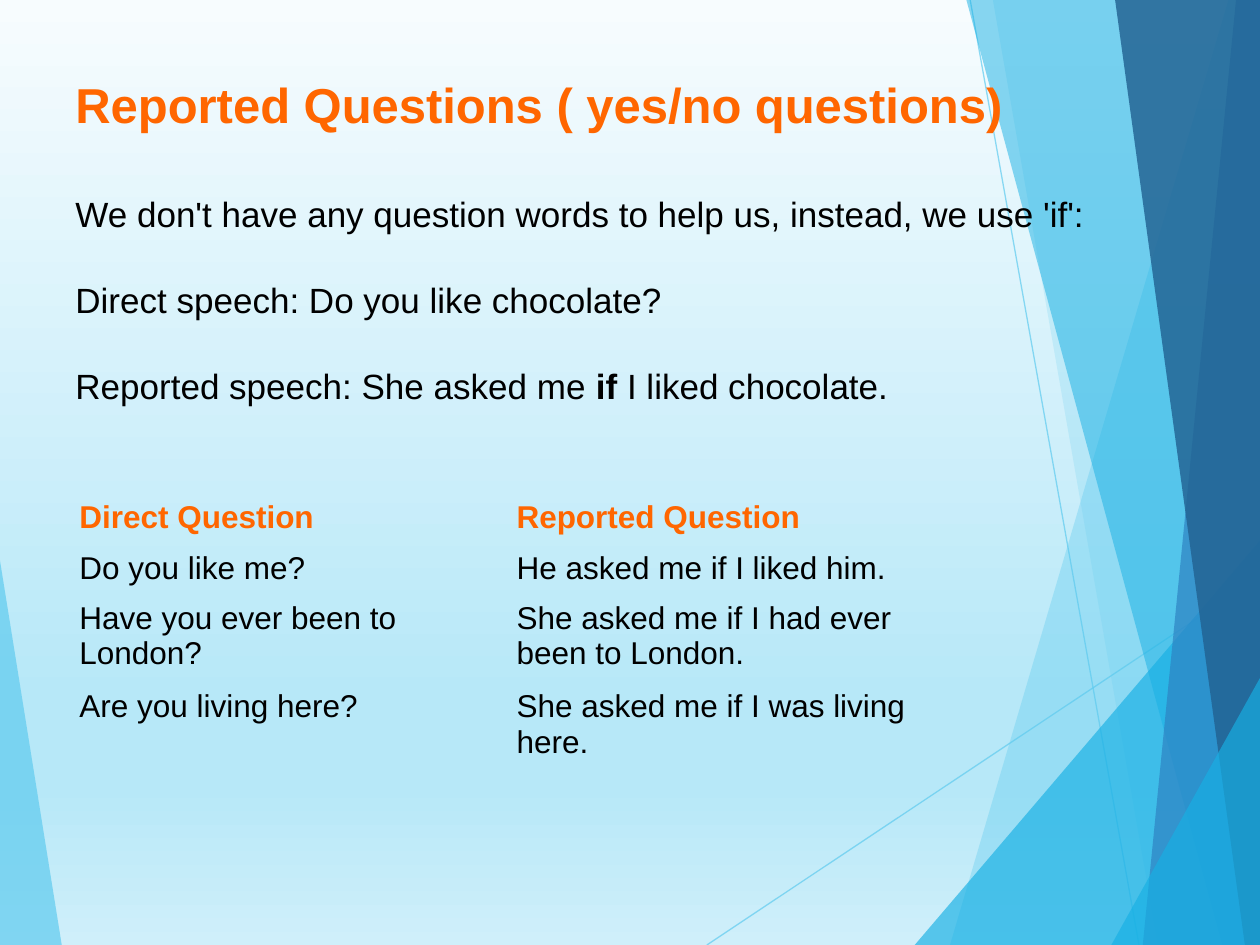
from typing import NamedTuple

from lxml.etree import SubElement
from pptx import Presentation
from pptx.dml.color import RGBColor
from pptx.enum.shapes import MSO_CONNECTOR as Conn
from pptx.enum.text import MSO_ANCHOR as Anchor
from pptx.oxml.ns import qn
from pptx.util import Emu, Pt

COLS, ROWS = 1000, 750  # the slide grid
UNIT = 9144  # one grid cell, a hundredth of an inch
FONT = "Arial"

SKY = RGBColor(0x5F, 0xCB, 0xEF)
CYAN = RGBColor(0x17, 0xB0, 0xE4)
BLUE = RGBColor(0x2E, 0x83, 0xC3)
NAVY = RGBColor(0x22, 0x62, 0x92)
ORANGE = RGBColor(0xFF, 0x66, 0x00)
BLACK = RGBColor(0x00, 0x00, 0x00)
BACKDROP = [
    (0, RGBColor(0xF7, 0xFC, 0xFE)),
    (74, RGBColor(0xB7, 0xE8, 0xF8)),
    (83, RGBColor(0xB7, 0xE8, 0xF8)),
    (100, RGBColor(0xCF, 0xEF, 0xFA)),
]
NO_STYLE = "{2D5ABB26-0587-4C30-8999-92F81FD0307C}"


class Facet(NamedTuple):
    points: list[tuple[int, int]]
    color: RGBColor
    opacity: int


class Ray(NamedTuple):
    start: tuple[int, int]
    end: tuple[int, int]


class Line(NamedTuple):
    runs: list[tuple[str, bool]]
    size: int
    color: RGBColor
    before: int


def right_facet(top: int, bottom: int, color: RGBColor, opacity: int) -> Facet:
    """Full-height facet between a slanted edge and the right side."""
    return Facet([(top, 0), (bottom, ROWS), (COLS, ROWS), (COLS, 0)], color, opacity)


def corner_facet(left: int, top: int) -> Facet:
    return Facet([(left, ROWS), (COLS, top), (COLS, ROWS)], CYAN, 66)


LEFT_FACET = Facet([(0, 445), (49, ROWS), (0, ROWS)], SKY, 70)
RAYS = [Ray((561, 750), (1001, 457)), Ray((770, 0), (904, 750))]
RIGHT_FACETS = [
    right_facet(975, 754, SKY, 36),
    right_facet(788, 919, SKY, 20),
    corner_facet(726, 429),
    right_facet(767, 970, CYAN, 50),
    right_facet(981, 907, BLUE, 70),
    right_facet(885, 988, NAVY, 82),
    corner_facet(882, 538),
]
LINES = [
    Line([("Reported Questions ( yes/no questions)", True)], 28, ORANGE, 0),
    Line([("We don't have any question words to help us, instead, we use\u00a0'if':", False)],
         20, BLACK, 34),
    Line([("Direct speech: Do you like chocolate?", False)], 20, BLACK, 25),
    Line([("Reported speech: She asked me ", False), ("if", True),
          (" I liked chocolate.", False)], 20, BLACK, 25),
]
QUESTIONS = [
    ("Direct Question", "Reported Question"),
    ("Do you like me?", "He asked me if I liked him."),
    ("Have you ever been to London?", "She asked me if I had ever been to London."),
    ("Are you living here?", "She asked me if I was living here."),
]
ROW_HEIGHTS = [40, 40, 70, 70]
COL_WIDTH = 347


def grid(*cells: int) -> list[Emu]:
    return [Emu(c * UNIT) for c in cells]


def set_opacity(element, percent: int) -> None:
    color = next(element.iter(qn("a:srgbClr")))
    SubElement(color, qn("a:alpha"), val=str(percent * 1000))


def paint_background(slide) -> None:
    fill = slide.background.fill
    fill.gradient()
    fill.gradient_angle = 270
    stops = next(slide.element.iter(qn("a:gsLst")))
    for stop in list(stops):
        stops.remove(stop)
    for pos, color in BACKDROP:
        stop = SubElement(stops, qn("a:gs"), pos=str(pos * 1000))
        SubElement(stop, qn("a:srgbClr"), val=str(color))


def draw_facet(slide, facet: Facet) -> None:
    builder = slide.shapes.build_freeform(*facet.points[0], scale=UNIT)
    builder.add_line_segments(facet.points[1:], close=True)
    sp = builder.convert_to_shape()
    sp.shadow.inherit = False
    sp.line.fill.background()
    sp.fill.solid()
    sp.fill.fore_color.rgb = facet.color
    set_opacity(sp.element, facet.opacity)


def draw_ray(slide, ray: Ray) -> None:
    line = slide.shapes.add_connector(Conn.STRAIGHT, *grid(*ray.start, *ray.end))
    line.line.width = Pt(0.75)
    line.line.color.rgb = SKY
    set_opacity(line.element, 70)
    SubElement(line.element.spPr, qn("a:effectLst"))


def set_font(p, size: int, color: RGBColor) -> None:
    p.font.name, p.font.size, p.font.color.rgb = FONT, Pt(size), color


def draw_text(slide) -> None:
    tf = slide.shapes.add_textbox(*grid(50, 50, 842, 481)).text_frame
    tf.word_wrap = True
    tf.margin_top = Emu(9 * UNIT)
    for i, line in enumerate(LINES):
        p = tf.add_paragraph() if i else tf.paragraphs[0]
        p.space_before = Pt(line.before)
        set_font(p, line.size, line.color)
        for text, bold in line.runs:
            r = p.add_run()
            r.text, r.font.bold = text, bold


def draw_table(slide) -> None:
    frame = slide.shapes.add_table(
        len(QUESTIONS), 2, *grid(58, 392, 2 * COL_WIDTH, sum(ROW_HEIGHTS)))
    table = frame.table
    next(frame.element.iter(qn("a:tableStyleId"))).text = NO_STYLE
    table.horz_banding = False
    for col in table.columns:
        col.width = Emu(COL_WIDTH * UNIT)
    for i, (row, height, texts) in enumerate(zip(table.rows, ROW_HEIGHTS, QUESTIONS)):
        row.height = Emu(height * UNIT)
        for cell, text in zip(row.cells, texts):
            cell.fill.background()
            cell.vertical_anchor = Anchor.TOP
            cell.margin_left = cell.margin_right = Emu(5 * UNIT)
            cell.margin_top = cell.margin_bottom = Emu(5 * UNIT)
            cell.text = text
            p = cell.text_frame.paragraphs[0]
            set_font(p, 18, BLACK if i else ORANGE)
            p.font.bold = i == 0


def main() -> None:
    prs = Presentation()
    prs.slide_width, prs.slide_height = grid(COLS, ROWS)
    slide = prs.slides.add_slide(prs.slide_layouts[6])
    paint_background(slide)
    draw_facet(slide, LEFT_FACET)
    for ray in RAYS:
        draw_ray(slide, ray)
    for facet in RIGHT_FACETS:
        draw_facet(slide, facet)
    draw_text(slide)
    draw_table(slide)
    prs.save("out.pptx")


if __name__ == "__main__":
    main()
